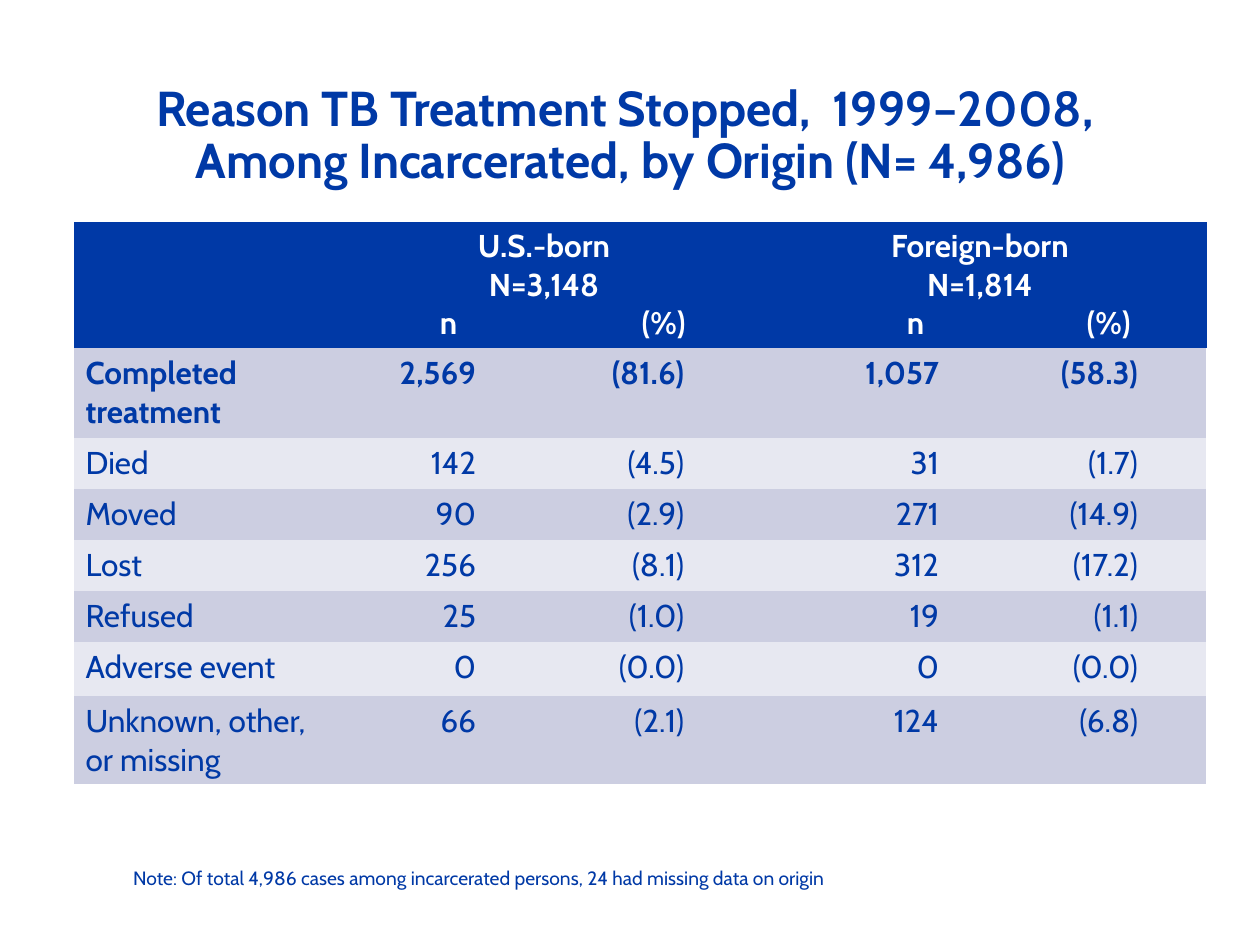
import pptx
import pptx.dml.color
import pptx.enum.text
import pptx.oxml.ns
import pptx.util
from lxml import etree

RGBColor = pptx.dml.color.RGBColor
Align = pptx.enum.text.PP_ALIGN
Anchor = pptx.enum.text.MSO_ANCHOR
qn = pptx.oxml.ns.qn

BLUE = RGBColor(0x00, 0x39, 0xA6)
WHITE = RGBColor(0xFF, 0xFF, 0xFF)
BAND_DARK = RGBColor(0xCC, 0xCE, 0xE1)
BAND_LIGHT = RGBColor(0xE7, 0xE8, 0xF1)
PLAIN_TABLE = "{2D5ABB26-0587-4C30-8999-92F81FD0307C}"
PX_PER_INCH = 126
CELL_INSET = 13
NUMBER_INSET = 69

COLUMN_WIDTHS = [262, 210, 208, 255, 199]
ROW_HEIGHTS = [127, 90, 51, 51, 51, 51, 54, 89]
GROUPS = [
    (1, "U.S.-born", "N=3,148", (101, 316)),
    (3, "Foreign-born", "N=1,814", (150, 343)),
]
REASONS = [
    ("Completed treatment", "2,569", "(81.6)", "1,057", "(58.3)"),
    ("Died", "142", "(4.5)", "31", "(1.7)"),
    ("Moved", "90", "(2.9)", "271", "(14.9)"),
    ("Lost", "256", "(8.1)", "312", "(17.2)"),
    ("Refused", "25", "(1.0)", "19", "(1.1)"),
    ("Adverse event", "0", "(0.0)", "0", "(0.0)"),
    ("Unknown, other, or missing", "66", "(2.1)", "124", "(6.8)"),
]


def px(length):
    return pptx.util.Emu(round(length * 914400 / PX_PER_INCH))


def write(para, text, size=18, color=BLUE, bold=False, align=Align.LEFT,
          spacing=None, tabs=()):
    para.alignment = align
    if spacing:
        para.line_spacing = pptx.util.Pt(spacing)
    if tabs:
        tab_list = etree.SubElement(para._p.get_or_add_pPr(), qn("a:tabLst"))
        for position in tabs:
            etree.SubElement(tab_list, qn("a:tab"), pos=str(px(position)), algn="ctr")
    for number, line in enumerate(text.split("\n")):
        if number:
            para.add_line_break()
        span = para.add_run()
        span.text = line
        span.font.name = "Cabin"
        span.font.size = pptx.util.Pt(size)
        span.font.bold = bold
        span.font.color.rgb = color


class SlideBuilder:
    def __init__(self, slide):
        self.slide = slide

    def text(self, left, top, width, height, text, anchor=Anchor.MIDDLE,
             inset=CELL_INSET, **style):
        box = self.slide.shapes.add_textbox(px(left), px(top), px(width), px(height))
        frame = box.text_frame
        frame.word_wrap = True
        frame.vertical_anchor = anchor
        frame.margin_left = px(inset)
        write(frame.paragraphs[0], text, **style)

    def table(self, left, top, widths, heights):
        table = self.slide.shapes.add_table(
            len(heights), len(widths), px(left), px(top),
            px(sum(widths)), px(sum(heights))).table
        table.first_row = table.horz_banding = False
        table._tbl.tblPr.find(qn("a:tableStyleId")).text = PLAIN_TABLE
        for column, width in zip(table.columns, widths):
            column.width = px(width)
        for row, height in zip(table.rows, heights):
            row.height = px(height)
        last_row, last_column = len(heights) - 1, len(widths) - 1
        for y in range(len(heights)):
            for x in range(len(widths)):
                cell = table.cell(y, x)
                edges = {"L": x == 0, "R": x == last_column,
                         "T": y == 0, "B": y == last_row}
                self.borders(cell, [side for side, outer in edges.items() if outer])
                cell.fill.solid()
                band = BAND_DARK if y % 2 else BAND_LIGHT
                cell.fill.fore_color.rgb = band if y else BLUE
        return table

    def borders(self, cell, sides):
        properties = cell._tc.get_or_add_tcPr()
        for side in sides:
            line = etree.SubElement(properties, qn("a:ln" + side),
                                    w=str(pptx.util.Pt(1)))
            fill = etree.SubElement(line, qn("a:solidFill"))
            etree.SubElement(fill, qn("a:srgbClr"), val=str(WHITE))

    def header(self, table, column, name, total, tabs):
        cell = table.cell(0, column)
        cell.merge(table.cell(0, column + 1))
        frame = cell.text_frame
        style = {"color": WHITE, "bold": True}
        write(frame.paragraphs[0], name, align=Align.CENTER, **style)
        write(frame.add_paragraph(), total, align=Align.CENTER, **style)
        write(frame.add_paragraph(), "\tn\t(%)", tabs=tabs, **style)

    def reason(self, table, row, values):
        for column, value in enumerate(values):
            cell = table.cell(row, column)
            if column:
                cell.margin_right = px(NUMBER_INSET)
            write(cell.text_frame.paragraphs[0], value, bold=row == 1,
                  align=Align.RIGHT if column else Align.LEFT)


def main():
    deck = pptx.Presentation()
    deck.slide_width, deck.slide_height = px(1260), px(945)
    page = SlideBuilder(deck.slides.add_slide(deck.slide_layouts[6]))
    page.text(63, 38, 1134, 157,
              "Reason TB Treatment Stopped,  1999–2008, \n"
              "Among Incarcerated, by Origin (N= 4,986)",
              anchor=Anchor.BOTTOM, size=28, bold=True, align=Align.CENTER, spacing=30)
    table = page.table(73, 221, COLUMN_WIDTHS, ROW_HEIGHTS)
    for group in GROUPS:
        page.header(table, *group)
    for row, values in enumerate(REASONS, start=1):
        page.reason(table, row, values)
    page.text(73, 860, 1103, 35,
              "Note: Of total 4,986 cases among incarcerated persons, "
              "24 had missing data on origin", inset=60, size=11)
    deck.save("out.pptx")


if __name__ == "__main__":
    main()
